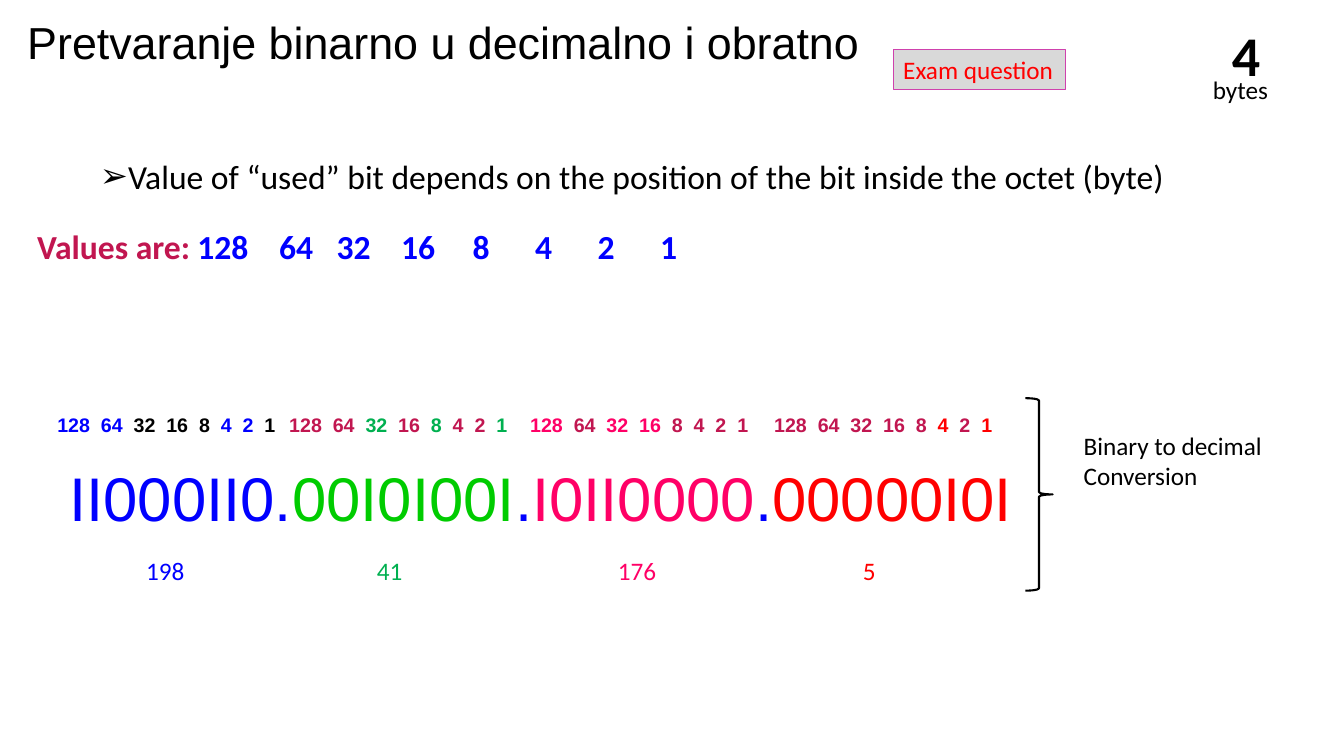
from lxml import etree
from pptx import Presentation
from pptx.dml.color import RGBColor
from pptx.enum import shapes, text
from pptx.oxml.ns import qn
from pptx.util import Inches, Pt

COLORS = {
    "black": "000000", "blue": "0000FF", "green": "00CC00", "leaf": "00B050",
    "pink": "FF0066", "red": "FF0000", "wine": "C11650",
    "grey": "D9D9D9", "violet": "CF41AD",
}
TITLE = "Pretvaranje binarno u decimalno i obratno"
RULE = "Value of “used” bit depends on the position of the bit inside the octet (byte)"
WEIGHTS = [128, 64, 32, 16, 8, 4, 2, 1]
# bits, bit colour, used weight colour, unused weight colour, weights left, decimal left
OCTETS = [
    ("II000II0", "blue", "blue", "black", 0.47, 1.35),
    ("00I0I00I", "green", "leaf", "wine", 2.77, 3.64),
    ("I0II0000", "pink", "pink", "wine", 5.16, 6.03),
    ("00000I0I", "red", "red", "wine", 7.58, 8.46),
]
VALUE_STOPS = [1.59, 2.4, 2.97, 3.61, 4.32, 4.94, 5.56, 6.18]
DIGIT = 0.556 * 14 / 72  # width of one 14 pt Arial digit, in inches


def rgb(name):
    return RGBColor.from_string(COLORS[name])


def set_tabs(paragraph, stops):
    tabs = etree.SubElement(paragraph._p.get_or_add_pPr(), qn("a:tabLst"))
    for stop in stops:
        etree.SubElement(tabs, qn("a:tab"), pos=str(Inches(stop)), algn="l")


def write(paragraph, runs, size, font="Calibri", bold=False):
    """Fill a paragraph with (words, colour) runs that share one font."""
    paragraph.font.name = font
    paragraph.font.size = Pt(size)
    paragraph.font.bold = bold
    for words, color in runs:
        run = paragraph.add_run()
        run.text = words
        run.font.color.rgb = rgb(color)


def label(parent, box, lines, size, font="Calibri", bold=False, stops=()):
    frame = parent.add_textbox(*map(Inches, box)).text_frame
    frame.word_wrap = True
    frame.margin_right = 0
    for index, runs in enumerate(lines):
        paragraph = frame.add_paragraph() if index else frame.paragraphs[0]
        if stops:
            set_tabs(paragraph, stops)
        write(paragraph, runs, size, font, bold)


def place(placeholder, box):
    placeholder.left, placeholder.top, placeholder.width, placeholder.height = map(Inches, box)
    frame = placeholder.text_frame
    frame.auto_size = text.MSO_AUTO_SIZE.NONE
    frame.vertical_anchor = text.MSO_ANCHOR.TOP
    paragraph = frame.paragraphs[0]
    paragraph.alignment = text.PP_ALIGN.LEFT
    paragraph.space_before = Pt(0)
    return frame, paragraph


def add_heading(slide):
    frame, heading = place(slide.shapes.title, (0.27, 0.16, 12.99, 1.17))
    frame.margin_left = 0
    heading.line_spacing = 0.9
    write(heading, [(TITLE, "black")], 32, "Arial")

    _, rule = place(slide.placeholders[1], (0.89, 1.5, 11.54, 0.5))
    properties = rule._p.get_or_add_pPr()
    properties.set("marL", str(Inches(0.28)))
    properties.set("indent", str(-Inches(0.28)))
    etree.SubElement(properties, qn("a:buChar"), char="➢")
    write(rule, [(RULE, "black")], 24)

    exam = slide.shapes.add_shape(shapes.MSO_SHAPE.RECTANGLE,
                                  *map(Inches, (8.86, 0.49, 1.71, 0.4)))
    exam.shadow.inherit = False
    exam.fill.solid()
    exam.fill.fore_color.rgb = rgb("grey")
    exam.line.color.rgb = rgb("violet")
    exam.line.width = Pt(0.75)
    exam.text_frame.word_wrap = False
    exam.text_frame.paragraphs[0].alignment = text.PP_ALIGN.LEFT
    write(exam.text_frame.paragraphs[0], [("Exam question", "red")], 18)

    size_badge = slide.shapes.add_group_shape().shapes
    label(size_badge, (12.12, 0.15, 0.51, 0.77), [[("4", "black")]], 40, bold=True)
    label(size_badge, (11.93, 0.69, 0.81, 0.4), [[("bytes", "black")]], 18)


def add_conversion(slide):
    values = "".join(f"\t{weight}" for weight in WEIGHTS)
    label(slide.shapes, (0.27, 2.19, 7.97, 0.5),
          [[("Values are:", "wine"), (values, "blue")]], 24, bold=True, stops=VALUE_STOPS)

    # each weight starts one digit width after the one before it
    weight_stops = [DIGIT * sum(len(str(w)) + 1 for w in WEIGHTS[:i])
                    for i in range(1, len(WEIGHTS))]
    address = []
    for bits, bit_color, used, unused, weights_left, decimal_left in OCTETS:
        weights = [(f"\t{w}" if i else str(w), used if bit == "I" else unused)
                   for i, (w, bit) in enumerate(zip(WEIGHTS, bits))]
        label(slide.shapes, (weights_left, 4.05, 2.38, 0.34), [weights], 14,
              "Arial", True, weight_stops)
        decimal = sum(w for w, bit in zip(WEIGHTS, bits) if bit == "I")
        label(slide.shapes, (decimal_left, 5.46, 0.62, 0.4), [[(str(decimal), used)]], 18)
        if address:
            address.append((".", "blue"))
        address.append((bits, bit_color))
    label(slide.shapes, (0.59, 4.51, 9.58, 0.8), [address], 44, "Arial")

    brace = slide.shapes.add_shape(shapes.MSO_SHAPE.RIGHT_BRACE,
                                   *map(Inches, (10.17, 3.95, 0.27, 1.91)))
    brace.shadow.inherit = False
    brace.fill.background()
    brace.line.color.rgb = rgb("black")
    brace.line.width = Pt(1.5)
    label(slide.shapes, (10.65, 4.22, 2.03, 1.01),
          [[("Binary to decimal", "black")], [("Conversion", "black")]], 18)


def main():
    deck = Presentation()
    deck.slide_width, deck.slide_height = Inches(13.33), Inches(7.5)
    slide = deck.slides.add_slide(deck.slide_layouts[1])
    add_heading(slide)
    add_conversion(slide)
    deck.save("out.pptx")


if __name__ == "__main__":
    main()
